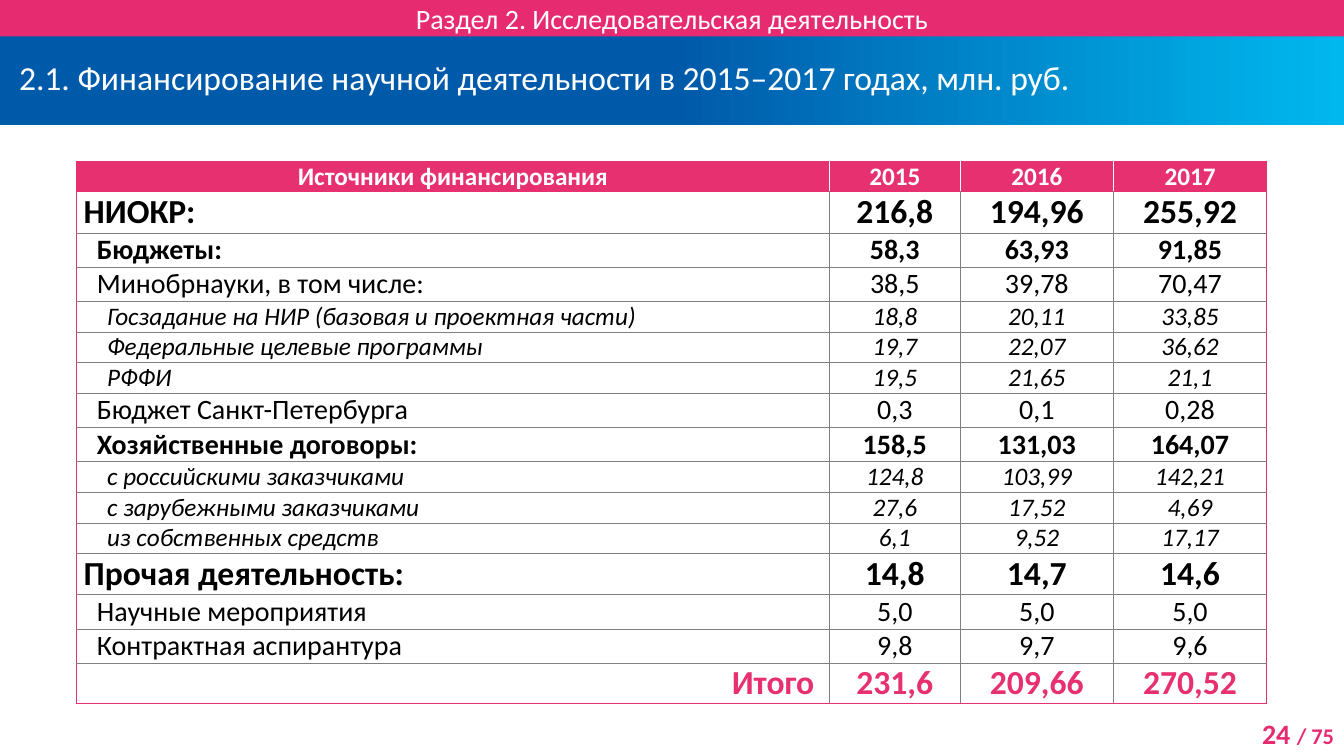
from lxml import etree
from pptx import Presentation, util as u
from pptx.dml.color import RGBColor
from pptx.enum import shapes, text
from pptx.oxml import ns

PINK = RGBColor(0xE7, 0x2B, 0x70)
TABLE_PINK = RGBColor(0xE7, 0x30, 0x70)
BLUE = RGBColor(0x00, 0x5A, 0xAA)
CYAN = RGBColor(0x00, 0xB8, 0xEE)
GREY = RGBColor(0x80, 0x80, 0x80)
WHITE = RGBColor(0xFF, 0xFF, 0xFF)
BLACK = RGBColor(0x00, 0x00, 0x00)

LEFT, CENTER, RIGHT = text.PP_ALIGN.LEFT, text.PP_ALIGN.CENTER, text.PP_ALIGN.RIGHT
SLIDE_WIDTH, SLIDE_HEIGHT = 33.87, 19.05
COLUMN_WIDTHS = (18.97, 3.3, 3.86, 3.86)
LINE_HEIGHT = 1.22

STYLES = {
    "header": {"size": u.Pt(18), "bold": True, "italic": False, "color": WHITE},
    "section": {"size": u.Pt(24), "bold": True, "italic": False, "color": BLACK},
    "group": {"size": u.Pt(20), "bold": True, "italic": False, "color": BLACK},
    "item": {"size": u.Pt(20), "bold": False, "italic": False, "color": BLACK},
    "detail": {"size": u.Pt(18), "bold": False, "italic": True, "color": BLACK},
    "total": {"size": u.Pt(24), "bold": True, "italic": False, "color": TABLE_PINK},
}
LABEL_INDENTS = {"group": 0.33, "item": 0.33, "detail": 0.59}
LABEL_ALIGNMENTS = {"header": CENTER, "total": RIGHT}

FUNDING = [
    ("header", "Источники финансирования", "2015", "2016", "2017"),
    ("section", "НИОКР:", "216,8", "194,96", "255,92"),
    ("group", "Бюджеты:", "58,3", "63,93", "91,85"),
    ("item", "Минобрнауки, в том числе:", "38,5", "39,78", "70,47"),
    ("detail", "Госзадание на НИР (базовая и проектная части)", "18,8", "20,11", "33,85"),
    ("detail", "Федеральные целевые программы", "19,7", "22,07", "36,62"),
    ("detail", "РФФИ", "19,5", "21,65", "21,1"),
    ("item", "Бюджет Санкт-Петербурга", "0,3", "0,1", "0,28"),
    ("group", "Хозяйственные договоры:", "158,5", "131,03", "164,07"),
    ("detail", "с российскими заказчиками", "124,8", "103,99", "142,21"),
    ("detail", "с зарубежными заказчиками", "27,6", "17,52", "4,69"),
    ("detail", "из собственных средств", "6,1", "9,52", "17,17"),
    ("section", "Прочая деятельность:", "14,8", "14,7", "14,6"),
    ("item", "Научные мероприятия", "5,0", "5,0", "5,0"),
    ("item", "Контрактная аспирантура", "9,8", "9,7", "9,6"),
    ("total", "Итого", "231,6", "209,66", "270,52"),
]


def set_attributes(target, values):
    """Set every named value on the target."""
    for name, value in values.items():
        setattr(target, name, value)


def add_run(paragraph, words, style):
    """Add one formatted run to a paragraph."""
    run = paragraph.add_run()
    run.text = words
    set_attributes(run.font, {"name": "Calibri", **{k: v for k, v in style.items() if k != "color"}})
    run.font.color.rgb = style["color"]


def add_band(slide, box, words, size, alignment, inset):
    """Add a full-width band with one line of white text and return it."""
    shape = slide.shapes.add_shape(shapes.MSO_SHAPE.RECTANGLE, *map(u.Cm, box))
    shape.shadow.inherit = False
    shape.line.fill.background()
    set_attributes(shape.text_frame, {
        "word_wrap": True, "vertical_anchor": text.MSO_ANCHOR.MIDDLE,
        "margin_left": u.Cm(inset), "margin_right": u.Cm(inset),
        "margin_top": 0, "margin_bottom": 0,
    })
    paragraph = shape.text_frame.paragraphs[0]
    paragraph.alignment = alignment
    add_run(paragraph, words, {"size": u.Pt(size), "color": WHITE})
    return shape


def add_section_band(slide, box):
    """Add the pink section band."""
    band = add_band(slide, box, "Раздел 2. Исследовательская деятельность", 20, CENTER, 0)
    band.fill.solid()
    band.fill.fore_color.rgb = PINK


def add_title_band(slide, box):
    """Add the title band that turns from blue to cyan."""
    title = "2.1. Финансирование научной деятельности в 2015–2017 годах, млн. руб."
    band = add_band(slide, box, title, 24, LEFT, 0.48)
    band.text_frame.paragraphs[0].line_spacing = u.Pt(24)
    band.fill.gradient()
    band.fill.gradient_angle = 0
    for stop, position, color in zip(band.fill.gradient_stops, (0.5, 1), (BLUE, CYAN)):
        stop.position = position
        stop.color.rgb = color


def set_borders(cell, borders):
    """Draw the cell borders given as side: (colour, width in points)."""
    properties = cell._tc.get_or_add_tcPr()
    for index, side in enumerate("LRTB"):
        color, width = borders[side]
        line = etree.Element(ns.qn(f"a:ln{side}"), w=str(u.Pt(width)))
        fill = etree.SubElement(line, ns.qn("a:solidFill"))
        etree.SubElement(fill, ns.qn("a:srgbClr"), val=str(color))
        properties.insert(index, line)


def cell_borders(row, column):
    """Return the borders of the cell at a row and column."""
    last_row, last_column = len(FUNDING) - 1, len(COLUMN_WIDTHS) - 1
    outer, inner = (TABLE_PINK, 1), (GREY, 0.25)
    divider = (WHITE, 1) if row == 0 else inner
    return {
        "L": outer if column == 0 else divider,
        "R": outer if column == last_column else divider,
        "T": outer if row <= 1 else inner,
        "B": outer if row in (0, last_row) else inner,
    }


def fill_cell(cell, kind, words, is_label):
    """Write and format one cell of the funding table."""
    indent = LABEL_INDENTS.get(kind, 0) if is_label else 0
    right_gap = 0.2 if is_label and kind == "total" else 0
    set_attributes(cell, {
        "margin_left": u.Cm(0.18 + indent), "margin_right": u.Cm(0.18 + right_gap),
        "margin_top": 0, "margin_bottom": 0, "vertical_anchor": text.MSO_ANCHOR.MIDDLE,
    })
    paragraph = cell.text_frame.paragraphs[0]
    paragraph.alignment = LABEL_ALIGNMENTS.get(kind, LEFT) if is_label else CENTER
    add_run(paragraph, words, STYLES[kind])
    if kind == "header":
        cell.fill.solid()
        cell.fill.fore_color.rgb = TABLE_PINK
    else:
        cell.fill.background()


def add_funding_table(slide, box):
    """Add the table of funding by source and year."""
    frame = slide.shapes.add_table(len(FUNDING), len(COLUMN_WIDTHS), *map(u.Cm, box))
    table = frame.table
    set_attributes(table, {"first_row": False, "horz_banding": False})
    for column, width in zip(table.columns, COLUMN_WIDTHS):
        column.width = u.Cm(width)
    for row, (kind, *values) in enumerate(FUNDING):
        table.rows[row].height = int(STYLES[kind]["size"] * LINE_HEIGHT)
        for column, words in enumerate(values):
            cell = table.cell(row, column)
            fill_cell(cell, kind, words, column == 0)
            set_borders(cell, cell_borders(row, column))


def add_page_number(slide, box):
    """Add the page number and page count."""
    frame = slide.shapes.add_textbox(*map(u.Cm, box)).text_frame
    frame.word_wrap = True
    paragraph = frame.paragraphs[0]
    paragraph.alignment = RIGHT
    for words, size in (("24 ", 20), ("/ 75", 16)):
        add_run(paragraph, words, {"size": u.Pt(size), "bold": True, "color": PINK})


def main():
    """Build the funding slide."""
    presentation = Presentation()
    set_attributes(presentation, {
        "slide_width": u.Cm(SLIDE_WIDTH), "slide_height": u.Cm(SLIDE_HEIGHT),
    })
    slide = presentation.slides.add_slide(presentation.slide_layouts[6])
    add_page_number(slide, (30.81, 17.93, 3.06, 1.12))
    add_title_band(slide, (0, 0.92, SLIDE_WIDTH, 2.22))
    add_section_band(slide, (0, 0, SLIDE_WIDTH, 0.92))
    add_funding_table(slide, (1.93, 4.06, sum(COLUMN_WIDTHS), 13.46))
    presentation.save("out.pptx")


if __name__ == "__main__":
    main()
